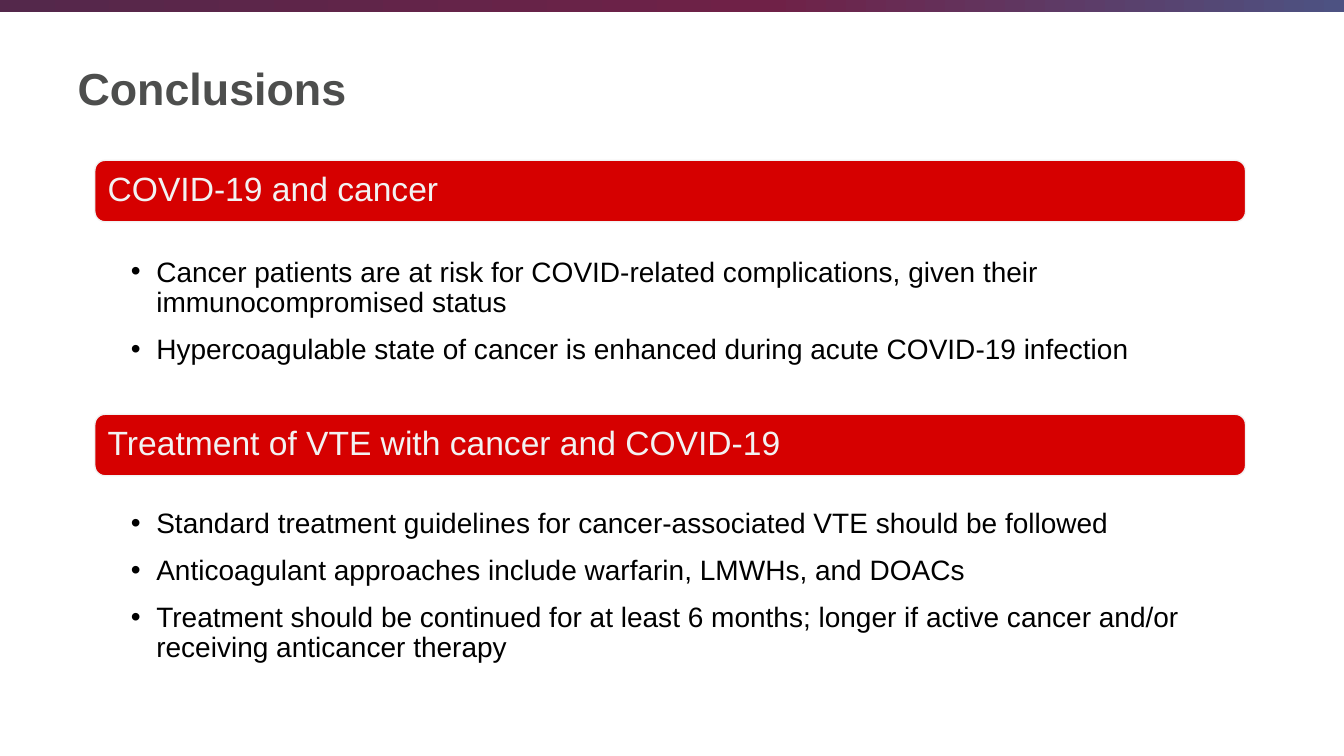
from copy import deepcopy
from dataclasses import dataclass

from lxml import etree
from pptx import Presentation
from pptx.dml.color import RGBColor
from pptx.enum.shapes import MSO_SHAPE
from pptx.enum.text import MSO_ANCHOR, PP_ALIGN
from pptx.oxml.ns import qn
from pptx.util import Cm, Pt

RECTANGLE = MSO_SHAPE.RECTANGLE
ROUNDED_RECTANGLE = MSO_SHAPE.ROUNDED_RECTANGLE
MIDDLE = MSO_ANCHOR.MIDDLE
TOP = MSO_ANCHOR.TOP
LEFT = PP_ALIGN.LEFT


@dataclass(frozen=True)
class Theme:
    font: str = "Arial"
    title_color: RGBColor = RGBColor(0x4D, 0x4E, 0x4D)
    heading_fill: RGBColor = RGBColor(0xD6, 0x00, 0x00)
    heading_text: RGBColor = RGBColor(0xF2, 0xF2, 0xF2)
    body_text: RGBColor = RGBColor(0x00, 0x00, 0x00)
    band_stops: tuple = (
        (0, RGBColor(0x54, 0x28, 0x4B)),
        (0.57, RGBColor(0x6F, 0x21, 0x47)),
        (1, RGBColor(0x4D, 0x52, 0x82)),
    )
    title_size: int = 32
    heading_size: int = 24
    body_size: int = 20


@dataclass(frozen=True)
class Section:
    heading: str
    heading_top: float
    bullets_top: float
    bullets_height: float
    bullets: tuple[str, ...]


THEME = Theme()
SECTION_LEFT = Cm(2.39)
SECTION_WIDTH = Cm(29)
HEADING_HEIGHT = Cm(1.55)
BULLET_INDENT = Cm(0.64)

SECTIONS = (
    Section(
        "COVID-19 and cancer", 4.04, 6.42, 3.94,
        (
            "Cancer patients are at risk for COVID-related complications, given their immunocompromised status",
            "Hypercoagulable state of cancer is enhanced during acute COVID-19 infection",
        ),
    ),
    Section(
        "Treatment of VTE with cancer and COVID-19", 10.44, 12.75, 5.13,
        (
            "Standard treatment guidelines for cancer-associated VTE should be followed",
            "Anticoagulant approaches include warfarin, LMWHs, and DOACs",
            "Treatment should be continued for at least 6 months; longer if active cancer and/or receiving anticancer therapy",
        ),
    ),
)


def style_paragraph(paragraph, size: int, color: RGBColor, bold: bool = False) -> None:
    paragraph.alignment = LEFT
    paragraph.font.name = THEME.font
    paragraph.font.size = Pt(size)
    paragraph.font.bold = bold
    paragraph.font.color.rgb = color


def add_bullet(paragraph) -> None:
    properties = paragraph._p.get_or_add_pPr()
    properties.set("marL", str(BULLET_INDENT))
    properties.set("indent", str(-BULLET_INDENT))
    etree.SubElement(properties, qn("a:buFont")).set("typeface", THEME.font)
    etree.SubElement(properties, qn("a:buChar")).set("char", "•")


def add_band(slide, width: int) -> None:
    band = slide.shapes.add_shape(RECTANGLE, 0, 0, width, Cm(0.3))
    band.shadow.inherit = False
    band.line.fill.background()
    band.fill.gradient()
    band.fill.gradient_angle = 0
    stop_list = band.fill._fill._gradFill.gsLst
    stop_list.insert(1, deepcopy(stop_list[0]))
    for stop, (position, color) in zip(band.fill.gradient_stops, THEME.band_stops):
        stop.position = position
        stop.color.rgb = color


def add_title(slide, text: str) -> None:
    title = slide.shapes.title
    title.left, title.top, title.width, title.height = Cm(1.7), Cm(0.56), Cm(29.85), Cm(3.3)
    title.text_frame.text = text
    title.text_frame.vertical_anchor = MIDDLE
    style_paragraph(title.text_frame.paragraphs[0], THEME.title_size, THEME.title_color, True)


def add_heading(slide, section: Section) -> None:
    heading = slide.shapes.add_shape(
        ROUNDED_RECTANGLE, SECTION_LEFT, Cm(section.heading_top), SECTION_WIDTH, HEADING_HEIGHT
    )
    heading.shadow.inherit = False
    heading.fill.solid()
    heading.fill.fore_color.rgb = THEME.heading_fill
    heading.line.color.rgb = THEME.heading_text
    heading.line.width = Pt(1)
    frame = heading.text_frame
    frame.text = section.heading
    frame.vertical_anchor = MIDDLE
    frame.margin_left = frame.margin_right = Cm(0.25)
    paragraph = frame.paragraphs[0]
    paragraph.line_spacing = 0.9
    style_paragraph(paragraph, THEME.heading_size, THEME.heading_text)


def add_bullets(slide, section: Section) -> None:
    box = slide.shapes.add_textbox(
        SECTION_LEFT, Cm(section.bullets_top), SECTION_WIDTH, Cm(section.bullets_height)
    )
    frame = box.text_frame
    frame.word_wrap = True
    frame.vertical_anchor = TOP
    frame.margin_left, frame.margin_right = Cm(0.91), Cm(0.41)
    frame.margin_top = frame.margin_bottom = Cm(0.08)
    for index, text in enumerate(section.bullets):
        paragraph = frame.add_paragraph() if index else frame.paragraphs[0]
        paragraph.text = text
        paragraph.line_spacing = 0.9
        paragraph.space_after = Pt(12)
        add_bullet(paragraph)
        style_paragraph(paragraph, THEME.body_size, THEME.body_text)


def main() -> None:
    presentation = Presentation()
    presentation.slide_width, presentation.slide_height = Cm(33.87), Cm(19.05)
    slide = presentation.slides.add_slide(presentation.slide_layouts[5])
    add_band(slide, presentation.slide_width)
    add_title(slide, "Conclusions")
    for section in SECTIONS:
        add_heading(slide, section)
        add_bullets(slide, section)
    presentation.save("out.pptx")


if __name__ == "__main__":
    main()
